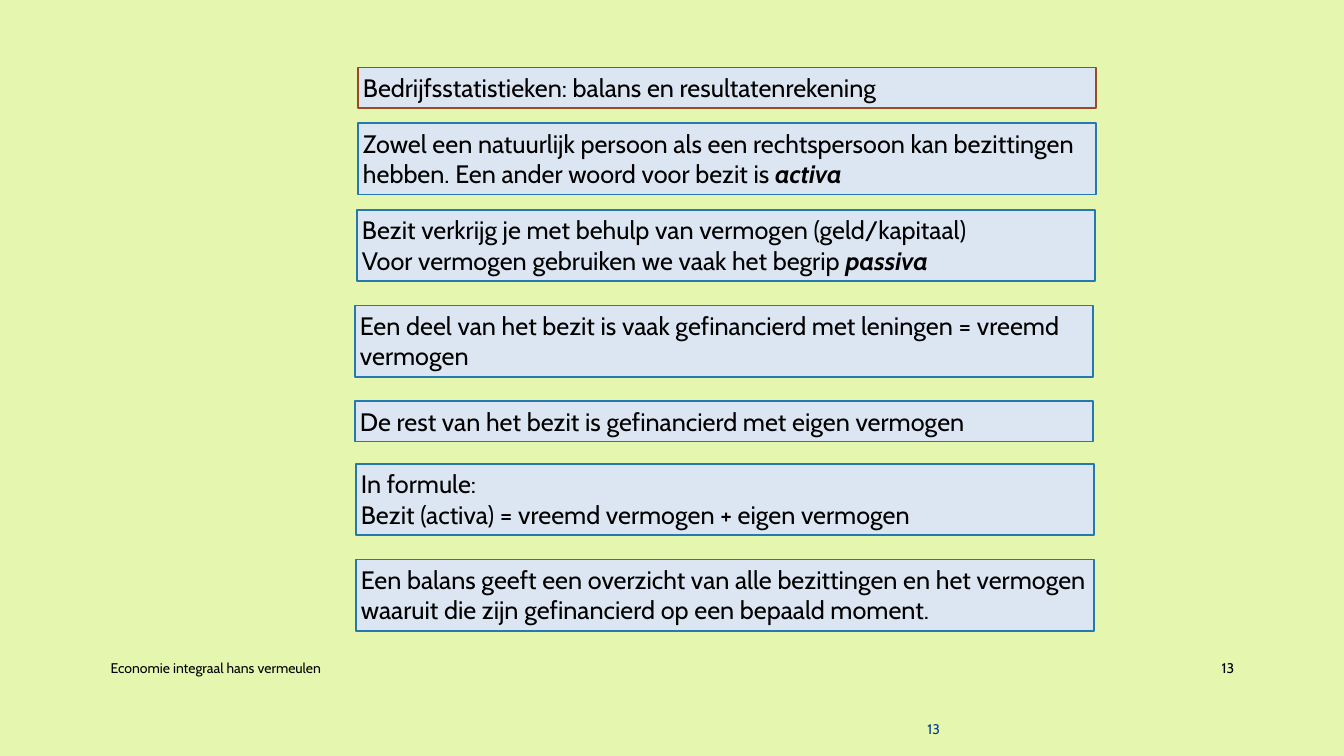
from pptx import Presentation
from pptx.dml.color import RGBColor as RGB
from pptx.enum.shapes import MSO_SHAPE as Shape
from pptx.enum.text import MSO_ANCHOR as Anchor, MSO_AUTO_SIZE as Fit, PP_ALIGN as Align
from pptx.util import Pt

PX = 9144
LIME = RGB(0xE5, 0xF7, 0xAF)
PALE = RGB(0xDC, 0xE6, 0xF2)
BLUE = RGB(0x23, 0x79, 0xB0)
RUST = RGB(0x98, 0x4B, 0x26)
NAVY = RGB(0x07, 0x3E, 0x87)
BLACK = RGB(0, 0, 0)

WIDE, ONE, TWO = 732, 40, 71
CARDS = [
    (355, 67, ONE, RUST, ["Bedrijfsstatistieken: balans en resultatenrekening"], ""),
    (355, 122, TWO, BLUE, ["Zowel een natuurlijk persoon als een rechtspersoon kan bezittingen "
                           "hebben. Een ander woord voor bezit is "], "activa"),
    (354, 208, TWO, BLUE, ["Bezit verkrijg je met behulp van vermogen (geld/kapitaal)",
                           "Voor vermogen gebruiken we vaak het begrip "], "passiva"),
    (352, 303, TWO, BLUE, ["Een deel van het bezit is vaak gefinancierd met leningen = vreemd",
                           "vermogen"], ""),
    (352, 398, ONE, BLUE, ["De rest van het bezit is gefinancierd met eigen vermogen"], ""),
    (353, 460, TWO, BLUE, ["In formule:",
                           "Bezit (activa) = vreemd vermogen + eigen vermogen"], ""),
    (353, 555, TWO, BLUE, ["Een balans geeft een overzicht van alle bezittingen en het vermogen "
                           "waaruit die zijn gefinancierd op een bepaald moment."], ""),
]


class Deck:
    """Holds the style and the current slide, and draws its elements."""

    def __init__(self, width, height, font):
        self.font = font
        self.prs = Presentation()
        self.prs.slide_width, self.prs.slide_height = width * PX, height * PX
        self.slide = self.prs.slides.add_slide(self.prs.slide_layouts[6])
        fill = self.slide.background.fill
        fill.solid()
        fill.fore_color.rgb = LIME

    def set_text(self, frame, lines, size, color, align=Align.LEFT, term=""):
        frame.word_wrap = True
        frame.text = "\n".join(lines)
        if term:
            run = frame.paragraphs[-1].add_run()
            run.text = term
            run.font.bold = run.font.italic = True
        for para in frame.paragraphs:
            para.alignment = align
            for run in para.runs:
                run.font.name, run.font.size = self.font, Pt(size)
                run.font.color.rgb = color

    def label(self, left, top, width, text, color=BLACK, align=Align.LEFT, anchor=Anchor.MIDDLE):
        box = self.slide.shapes.add_textbox(left * PX, top * PX, width * PX, ONE * PX)
        box.text_frame.vertical_anchor = anchor
        self.set_text(box.text_frame, [text], 10, color, align)

    def card(self, left, top, height, edge, lines, term):
        box = self.slide.shapes.add_shape(
            Shape.RECTANGLE, left * PX, top * PX, WIDE * PX, height * PX)
        box.shadow.inherit = False
        box.fill.solid()
        box.fill.fore_color.rgb = PALE
        box.line.color.rgb = edge
        box.line.width = Pt(1.25)
        frame = box.text_frame
        frame.margin_left = frame.margin_right = 5 * PX
        frame.margin_top = frame.margin_bottom = 5 * PX
        frame.vertical_anchor = Anchor.TOP
        self.set_text(frame, lines, 18, BLACK, term=term)
        frame.auto_size = Fit.SHAPE_TO_FIT_TEXT


def main():
    deck = Deck(1333, 750, "Cabin")
    deck.label(100, 643, 730, "Economie integraal hans vermeulen")
    deck.label(1150, 643, 84, "13", align=Align.RIGHT)
    deck.label(910, 710, 233, "13", NAVY, anchor=Anchor.TOP)
    for card in CARDS:
        deck.card(*card)
    deck.prs.save("out.pptx")


if __name__ == "__main__":
    main()
